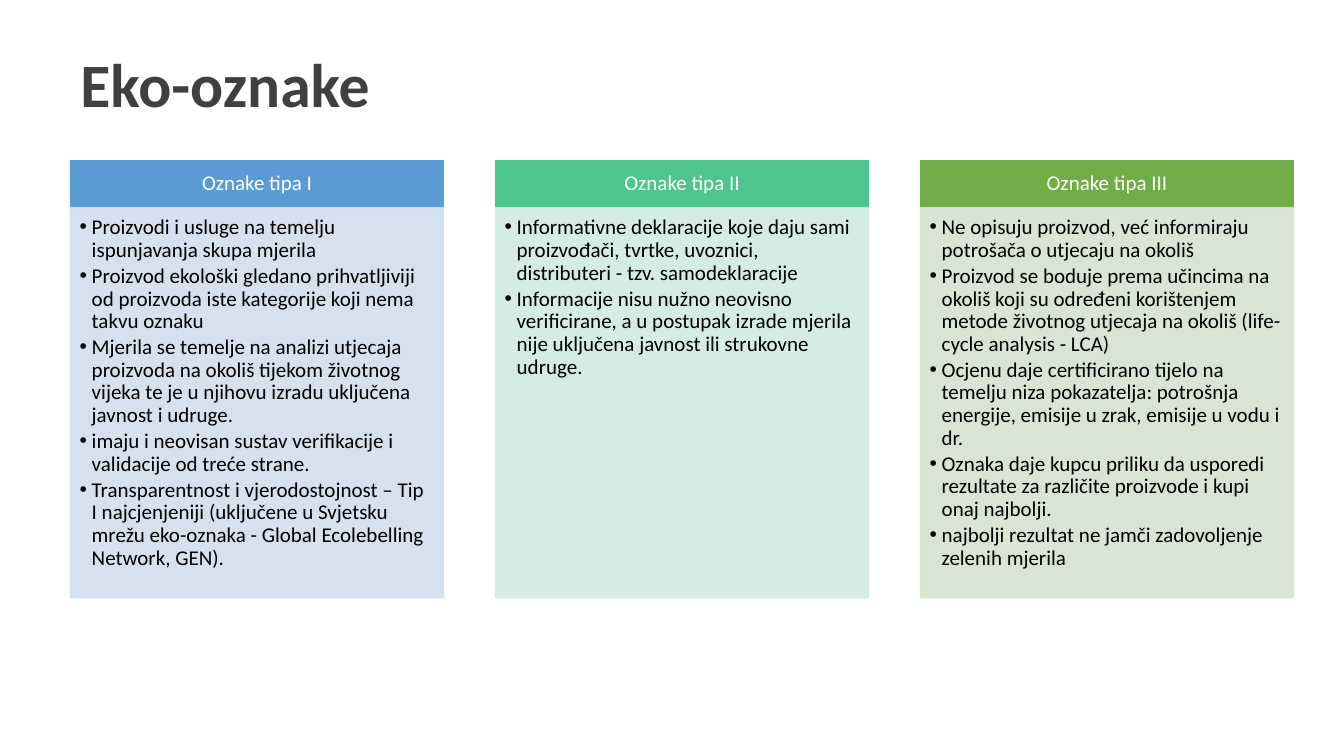
from lxml import etree
from pptx import Presentation
from pptx.dml.color import RGBColor
from pptx.enum.shapes import MSO_SHAPE
from pptx.enum.text import MSO_ANCHOR, PP_ALIGN
from pptx.oxml.ns import qn
from pptx.util import Inches, Pt

RECT = MSO_SHAPE.RECTANGLE
TOP, MIDDLE = MSO_ANCHOR.TOP, MSO_ANCHOR.MIDDLE
LEFT, CENTER = PP_ALIGN.LEFT, PP_ALIGN.CENTER

WHITE = RGBColor(0xFF, 0xFF, 0xFF)
BLACK = RGBColor(0x00, 0x00, 0x00)
GRAY = RGBColor(0x40, 0x40, 0x40)
BLUE = RGBColor(0x5B, 0x9B, 0xD5)
TEAL = RGBColor(0x4D, 0xC5, 0x8D)
GREEN = RGBColor(0x70, 0xAD, 0x47)
PALE_BLUE = RGBColor(0xD2, 0xDE, 0xEF)
PALE_TEAL = RGBColor(0xD0, 0xEA, 0xE1)
PALE_GREEN = RGBColor(0xD5, 0xE3, 0xCF)

# Column grid, in inches
START, END, WIDTH = 0.7, 12.83, 3.7
HEAD_TOP, HEAD_H, BODY_H = 1.59, 0.47, 3.87

COLUMNS = [
    ("Oznake tipa I", BLUE, PALE_BLUE, [
        "Proizvodi i usluge na temelju ispunjavanja skupa mjerila",
        "Proizvod ekološki gledano prihvatljiviji od proizvoda iste "
        "kategorije koji nema takvu oznaku",
        "Mjerila se temelje na analizi utjecaja proizvoda na okoliš tijekom "
        "životnog vijeka te je u njihovu izradu uključena javnost i udruge.",
        "imaju i neovisan sustav verifikacije i validacije od treće strane.",
        "Transparentnost i vjerodostojnost – Tip I najcjenjeniji (uključene u "
        "Svjetsku mrežu eko-oznaka - Global Ecolebelling Network, GEN).",
    ]),
    ("Oznake tipa II", TEAL, PALE_TEAL, [
        "Informativne deklaracije koje daju sami proizvođači, tvrtke, "
        "uvoznici, distributeri - tzv. samodeklaracije",
        "Informacije nisu nužno neovisno verificirane, a u postupak izrade "
        "mjerila nije uključena javnost ili strukovne udruge.",
    ]),
    ("Oznake tipa III", GREEN, PALE_GREEN, [
        "Ne opisuju proizvod, već informiraju potrošača o utjecaju na okoliš",
        "Proizvod se boduje prema učincima na okoliš koji su određeni "
        "korištenjem metode životnog utjecaja na okoliš "
        "(life-cycle analysis - LCA)",
        "Ocjenu daje certificirano tijelo na temelju niza pokazatelja: "
        "potrošnja energije, emisije u zrak, emisije u vodu i dr.",
        "Oznaka daje kupcu priliku da usporedi rezultate za različite "
        "proizvode i kupi onaj najbolji.",
        "najbolji rezultat ne jamči zadovoljenje zelenih mjerila",
    ]),
]


class Deck:
    """Holds the text style and the current slide."""

    face = "Calibri"
    size = 15

    def __init__(self, slide):
        self.slide = slide

    def label(self, shape, lines, color, size, align, anchor, insets,
              bold=False, bullet=False):
        frame = shape.text_frame
        frame.word_wrap = True
        frame.vertical_anchor = anchor
        (frame.margin_left, frame.margin_top,
         frame.margin_right, frame.margin_bottom) = map(Inches, insets)
        frame.text = "\n".join(lines)
        for para in frame.paragraphs:
            para.alignment = align
            para.line_spacing = 0.9
            if bullet:
                para.space_after = Pt(2.25)
                self.mark(para)
            font = para.font
            font.name, font.size, font.bold = self.face, Pt(size), bold
            font.color.rgb = color

    def mark(self, para):
        props = para._p.get_or_add_pPr()
        props.set("marL", str(Inches(0.12)))
        props.set("indent", str(Inches(-0.12)))
        etree.SubElement(props, qn("a:buFont")).set("typeface", "Arial")
        etree.SubElement(props, qn("a:buChar")).set("char", "•")

    def title(self, text, x, y, w, h):
        box = self.slide.shapes.add_textbox(*map(Inches, (x, y, w, h)))
        self.label(box, [text], GRAY, 44, LEFT, MIDDLE,
                   (0.1, 0.05, 0.1, 0.05), bold=True)

    def block(self, x, y, w, h, color, alpha=100):
        shape = self.slide.shapes.add_shape(RECT, *map(Inches, (x, y, w, h)))
        shape.shadow.inherit = False
        shape.line.width = Pt(1)
        for fill in (shape.fill, shape.line.fill):
            fill.solid()
            fill.fore_color.rgb = color
        if alpha < 100:
            for tone in shape._element.spPr.iter(qn("a:srgbClr")):
                etree.SubElement(tone, qn("a:alpha")).set(
                    "val", str(alpha * 1000))
        return shape

    def header(self, text, x, color):
        shape = self.block(x, HEAD_TOP, WIDTH, HEAD_H, color)
        self.label(shape, [text], WHITE, self.size, CENTER, MIDDLE,
                   (0.12, 0.07, 0.12, 0.07))

    def body(self, items, x, color):
        shape = self.block(x, HEAD_TOP + HEAD_H, WIDTH, BODY_H, color, 90)
        self.label(shape, items, BLACK, self.size, LEFT, TOP,
                   (0.09, 0.09, 0.12, 0.13), bullet=True)


def main():
    prs = Presentation()
    prs.slide_width, prs.slide_height = Inches(13.33), Inches(7.5)
    deck = Deck(prs.slides.add_slide(prs.slide_layouts[6]))

    # Title
    deck.title("Eko-oznake", 0.7, 0.32, 10.43, 1.09)

    # Label types, one column each
    step = (END - START - WIDTH) / (len(COLUMNS) - 1)
    for i, (name, dark, pale, items) in enumerate(COLUMNS):
        x = START + i * step
        deck.header(name, x, dark)
        deck.body(items, x, pale)

    prs.save("out.pptx")


if __name__ == "__main__":
    main()
